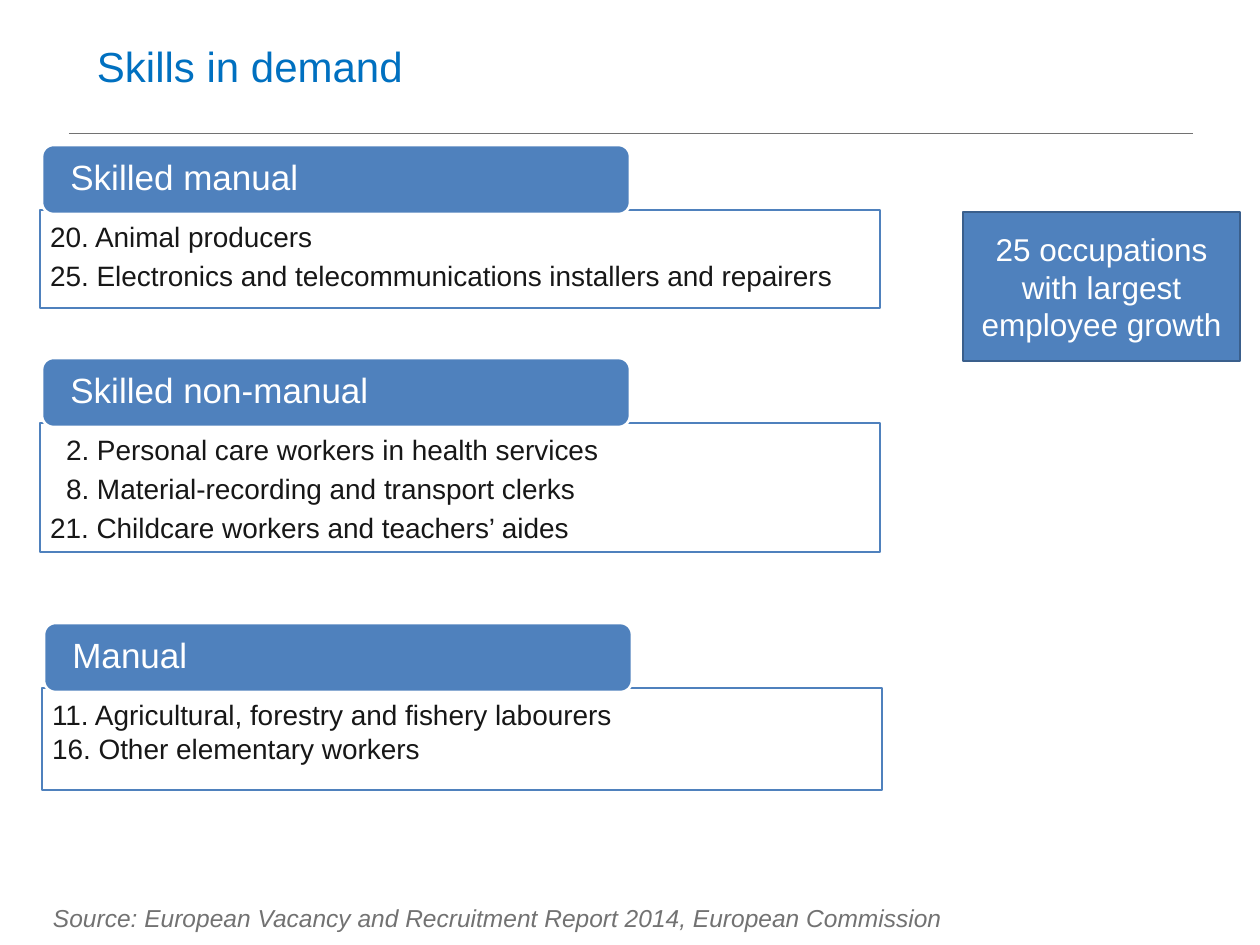
from lxml.etree import SubElement
from pptx import Presentation
from pptx.dml.color import RGBColor
from pptx.enum.shapes import MSO_CONNECTOR, MSO_SHAPE
from pptx.enum.text import MSO_ANCHOR, MSO_AUTO_SIZE, PP_ALIGN
from pptx.oxml.ns import qn
from pptx.util import Inches, Pt

SCALE = Inches(1) / 126
BLUE, WHITE, GRAY = "4F81BD", "FFFFFF", "727272"
GROUPS = [
    ("Skilled manual", 40, 210, 98, 3,
     ["20. Animal producers",
      "25. Electronics and telecommunications installers and repairers"]),
    ("Skilled non-manual", 40, 423, 129, 3,
     ["2. Personal care workers in health services",
      "8. Material-recording and transport clerks",
      "21. Childcare workers and teachers’ aides"]),
    ("Manual", 42, 688, 102, 0,
     ["11. Agricultural, forestry and fishery labourers",
      "16. Other elementary workers"]),
]


def px(length):
    return round(length * SCALE)


def color(value):
    return RGBColor.from_string(value)


class SkillsSlide:
    font_name = "Arial"

    def __init__(self, presentation):
        self.slide = presentation.slides.add_slide(presentation.slide_layouts[4])
        self.bodies = list(self.slide.placeholders)[1:]

    def place(self, shape, left, top, width, height):
        shape.left, shape.top = px(left), px(top)
        shape.width, shape.height = px(width), px(height)

    def paint(self, shape, fill, line):
        shape.fill.solid()
        shape.fill.fore_color.rgb = color(fill)
        shape.line.color.rgb = color(line)
        shape.line.width = Pt(1.5)

    def set_frame(self, shape, anchor, horizontal=13, vertical=6):
        frame = shape.text_frame
        frame.word_wrap = True
        frame.auto_size = MSO_AUTO_SIZE.NONE
        frame.vertical_anchor = anchor
        frame.margin_left = frame.margin_right = px(horizontal)
        frame.margin_top = frame.margin_bottom = px(vertical)
        return frame

    def set_font(self, paragraph, size, text_color, italic=False):
        for run in paragraph.runs:
            font = run.font
            font.name, font.size = self.font_name, Pt(size)
            font.bold, font.italic = False, italic
            font.color.rgb = color(text_color)

    def title(self, text, *box):
        shape = self.slide.shapes.title
        self.place(shape, *box)
        paragraph = self.set_frame(shape, MSO_ANCHOR.MIDDLE).paragraphs[0]
        paragraph.text = text
        paragraph.alignment = PP_ALIGN.LEFT
        self.set_font(paragraph, 24, "0070C0")

    def rule(self, left, top, width):
        line = self.slide.shapes.add_connector(
            MSO_CONNECTOR.STRAIGHT, px(left), px(top), px(left + width), px(top))
        line.line.color.rgb = color(GRAY)
        line.line.width = Pt(0.5)
        SubElement(line._element.spPr, qn("a:effectLst"))

    def list_panel(self, items, gap, *box):
        shape = self.bodies.pop(0)
        self.place(shape, *box)
        self.paint(shape, WHITE, BLUE)
        frame = self.set_frame(shape, MSO_ANCHOR.TOP, 10, 10)
        frame.text = "\n".join(items)
        for index, paragraph in enumerate(frame.paragraphs):
            properties = paragraph._p.get_or_add_pPr()
            single_digit = items[index].index(".") == 1
            properties.set("marL", str(px(16 if single_digit else 0)))
            properties.set("indent", "0")
            SubElement(properties, qn("a:buNone"))
            paragraph.space_before = Pt(gap if index else 0)
            self.set_font(paragraph, 16, "171717")

    def block(self, kind, fill, line, *box):
        shape = self.slide.shapes.add_shape(kind, 0, 0, 0, 0)
        self.place(shape, *box)
        self.paint(shape, fill, line)
        shape.shadow.inherit = False
        return shape

    def header(self, text, *box):
        shape = self.block(MSO_SHAPE.ROUNDED_RECTANGLE, BLUE, WHITE, *box)
        paragraph = self.set_frame(shape, MSO_ANCHOR.MIDDLE, 25, 4).paragraphs[0]
        paragraph.text = text
        paragraph.alignment = PP_ALIGN.LEFT
        paragraph.line_spacing = 0.9
        paragraph.space_after = Pt(7)
        self.set_font(paragraph, 20, WHITE)

    def callout(self, text, *box):
        shape = self.block(MSO_SHAPE.RECTANGLE, BLUE, "3A5F8C", *box)
        paragraph = self.set_frame(shape, MSO_ANCHOR.MIDDLE).paragraphs[0]
        paragraph.text = text
        paragraph.alignment = PP_ALIGN.CENTER
        self.set_font(paragraph, 18, WHITE)

    def source(self, text, *box):
        shape = self.slide.shapes.add_textbox(*map(px, box))
        paragraph = self.set_frame(shape, MSO_ANCHOR.TOP).paragraphs[0]
        paragraph.text = text
        self.set_font(paragraph, 14, GRAY, italic=True)

    def remove_unused(self):
        for shape in self.bodies:
            shape._element.getparent().remove(shape._element)


def main():
    presentation = Presentation()
    presentation.slide_width, presentation.slide_height = px(1260), px(945)
    page = SkillsSlide(presentation)
    page.title("Skills in demand", 84, 3, 1111, 125)
    page.rule(69, 133, 1124)
    for heading, left, top, height, gap, items in GROUPS:
        page.list_panel(items, gap, left, top, 840, height)
        page.header(heading, left + 2, top - 65, 588, 69)
    page.callout("25 occupations with largest employee growth", 963, 212, 277, 149)
    page.source("Source: European Vacancy and Recruitment Report 2014, European Commission",
                40, 897, 1142, 43)
    page.remove_unused()
    presentation.save("out.pptx")


if __name__ == "__main__":
    main()
